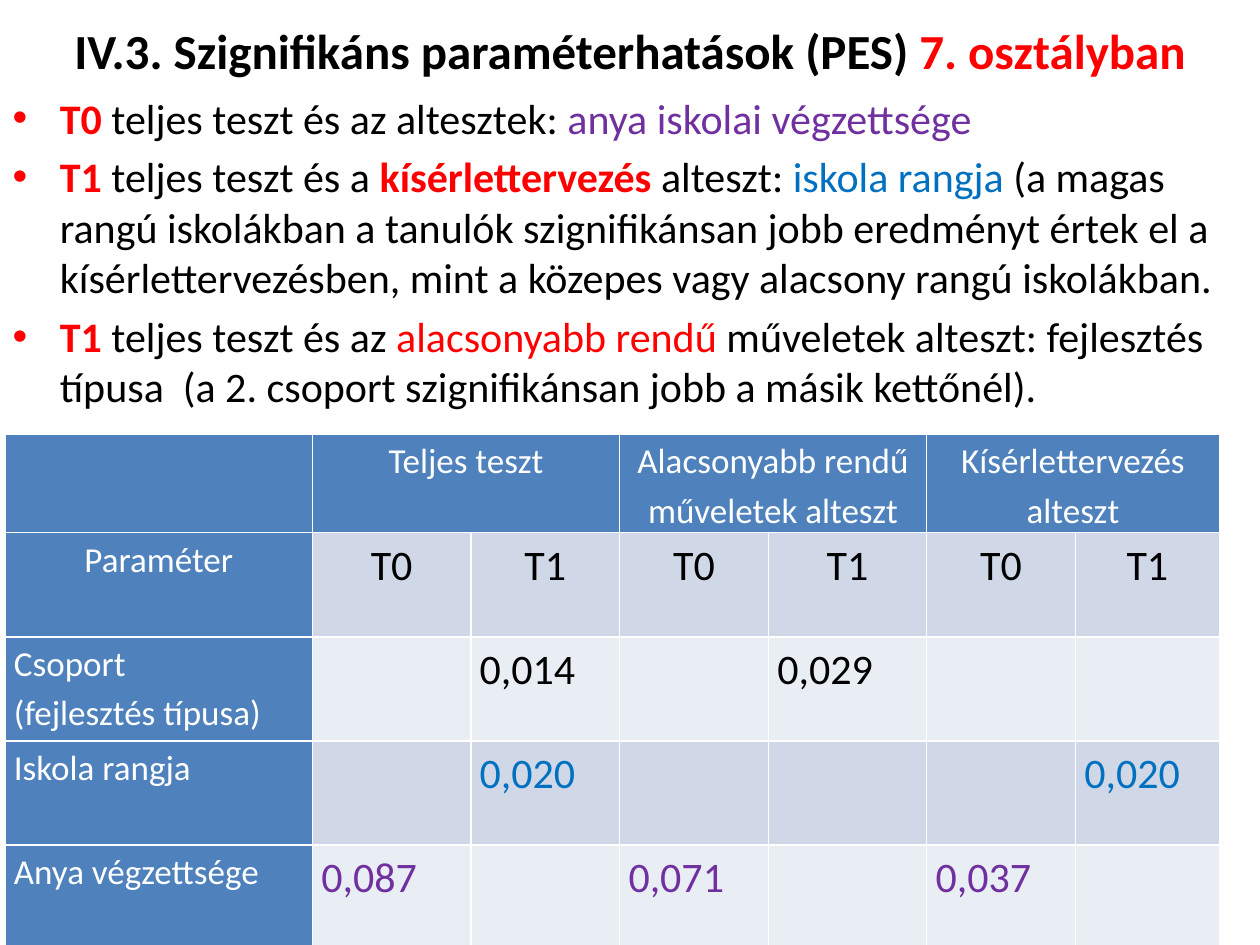
from typing import NamedTuple

from lxml.etree import SubElement
from pptx import Presentation
from pptx.dml.color import RGBColor
from pptx.enum.text import MSO_ANCHOR, MSO_AUTO_SIZE, PP_ALIGN
from pptx.oxml.ns import qn
from pptx.util import Cm, Pt

FONT = "Calibri"
BLACK, WHITE, RED = "000000", "FFFFFF", "FF0000"
PURPLE, BLUE = "7030A0", "0070C0"
HEADER_FILL, BAND_FILLS = "4F81BD", ("D0D8E8", "E9EDF4")


class Span(NamedTuple):
    text: str
    color: str = BLACK
    bold: bool = False


class Entry(NamedTuple):
    text: str
    color: str = BLACK
    size: int = 24
    align: PP_ALIGN = PP_ALIGN.LEFT


def rgb(color: str) -> RGBColor:
    return RGBColor.from_string(color)


def place(box, left: float, top: float, width: float, height: float) -> None:
    box.left, box.top, box.width, box.height = map(Cm, (left, top, width, height))


def write_spans(para, spans: list[Span], size: int) -> None:
    para.font.name, para.font.size = FONT, Pt(size)
    for span in spans:
        run = para.add_run()
        run.text = span.text
        run.font.color.rgb = rgb(span.color)
        run.font.bold = span.bold


def add_borders(cell, color: str, width: float) -> None:
    properties = cell._tc.get_or_add_tcPr()
    for position, side in enumerate(("lnL", "lnR", "lnT", "lnB")):
        line = properties.makeelement(qn(f"a:{side}"), {"w": str(Pt(width))})
        properties.insert(position, line)
        fill = SubElement(line, qn("a:solidFill"))
        SubElement(fill, qn("a:srgbClr"), val=color)


def fill_cell(cell, fill: str, entry: Entry | None) -> None:
    cell.fill.solid()
    cell.fill.fore_color.rgb = rgb(fill)
    add_borders(cell, WHITE, 1)
    cell.margin_left = cell.margin_right = Cm(0.18)
    cell.margin_top = cell.margin_bottom = 0
    if entry is None:
        return
    cell.text = entry.text
    for para in cell.text_frame.paragraphs:
        para.alignment, para.line_spacing = entry.align, 1.15
        para.font.name, para.font.size = FONT, Pt(entry.size)
        para.font.bold = False
        para.font.color.rgb = rgb(entry.color)


def heading(text: str, align: PP_ALIGN = PP_ALIGN.CENTER) -> Entry:
    return Entry(text, WHITE, 20, align)


TITLE = [
    Span("IV.3. Szignifikáns paraméterhatások (PES) ", bold=True),
    Span("7. osztályban", RED, True),
]
BULLETS = [
    [
        Span("T0", RED, True),
        Span(" teljes teszt és az altesztek: "),
        Span("anya iskolai végzettsége", PURPLE),
    ],
    [
        Span("T1", RED, True),
        Span(" teljes teszt és a "),
        Span("kísérlettervezés ", RED, True),
        Span("alteszt: "),
        Span("iskola rangja ", BLUE),
        Span("(a magas rangú iskolákban a tanulók szignifikánsan jobb eredményt "
             "értek el a kísérlettervezésben, mint a közepes vagy alacsony "
             "rangú iskolákban."),
    ],
    [
        Span("T1", RED, True),
        Span(" teljes teszt és az "),
        Span("alacsonyabb rendű ", RED),
        Span("műveletek alteszt: fejlesztés típusa  (a 2. csoport "
             "szignifikánsan jobb a másik kettőnél)."),
    ],
]

# Table content: tests head two columns each, effects are keyed by column
TESTS = ["Teljes teszt", "Alacsonyabb rendű műveletek alteszt",
         "Kísérlettervezés alteszt"]
EFFECTS = [
    ("Csoport\n(fejlesztés típusa)", BLACK, {2: "0,014", 4: "0,029"}),
    ("Iskola rangja", BLUE, {2: "0,020", 6: "0,020"}),
    ("Anya végzettsége", PURPLE, {1: "0,087", 3: "0,071", 5: "0,037"}),
]
COLUMN_WIDTHS = [6.2, 3.19, 3.0, 3.0, 3.19, 3.0, 2.9]
ROW_HEIGHTS = [1.84] + [2.1] * 4


def table_rows() -> list[list[Entry | None]]:
    tests = [None]
    phases = [heading("Paraméter")]
    for test in TESTS:
        tests += [heading(test), None]
        phases += [Entry(phase, align=PP_ALIGN.CENTER) for phase in ("T0", "T1")]
    rows = [tests, phases]
    for name, color, values in EFFECTS:
        rows.append([heading(name, PP_ALIGN.LEFT)] + [
            Entry(values[column], color) if column in values else None
            for column in range(1, len(COLUMN_WIDTHS))
        ])
    return rows


def add_effect_table(page) -> None:
    table = page.shapes.add_table(
        len(ROW_HEIGHTS), len(COLUMN_WIDTHS), Cm(0.1), Cm(8.75),
        Cm(sum(COLUMN_WIDTHS)), Cm(sum(ROW_HEIGHTS))).table
    table.first_row = table.horz_banding = False
    for column, width in zip(table.columns, COLUMN_WIDTHS):
        column.width = Cm(width)
    for row, height in zip(table.rows, ROW_HEIGHTS):
        row.height = Cm(height)
    for column in range(1, len(COLUMN_WIDTHS), 2):
        table.cell(0, column).merge(table.cell(0, column + 1))
    for r, entries in enumerate(table_rows()):
        for c, entry in enumerate(entries):
            is_header = r == 0 or c == 0
            fill = HEADER_FILL if is_header else BAND_FILLS[(r - 1) % 2]
            fill_cell(table.cell(r, c), fill, entry)


def main() -> None:
    deck = Presentation()
    deck.slide_width, deck.slide_height = Cm(25.4), Cm(19.05)
    page = deck.slides.add_slide(deck.slide_layouts[1])

    # Title
    title = page.shapes.title
    place(title, 0, 0, 25.4, 2.03)
    title.text_frame.vertical_anchor = MSO_ANCHOR.MIDDLE
    write_spans(title.text_frame.paragraphs[0], TITLE, 28)

    # Bulleted findings
    body = page.placeholders[1]
    place(body, 0, 1.73, 25.4, 14.99)
    frame = body.text_frame
    frame.auto_size = MSO_AUTO_SIZE.NONE
    for index, spans in enumerate(BULLETS):
        para = frame.add_paragraph() if index else frame.paragraphs[0]
        write_spans(para, spans, 24)

    # Significance table
    add_effect_table(page)
    deck.save("out.pptx")


if __name__ == "__main__":
    main()
